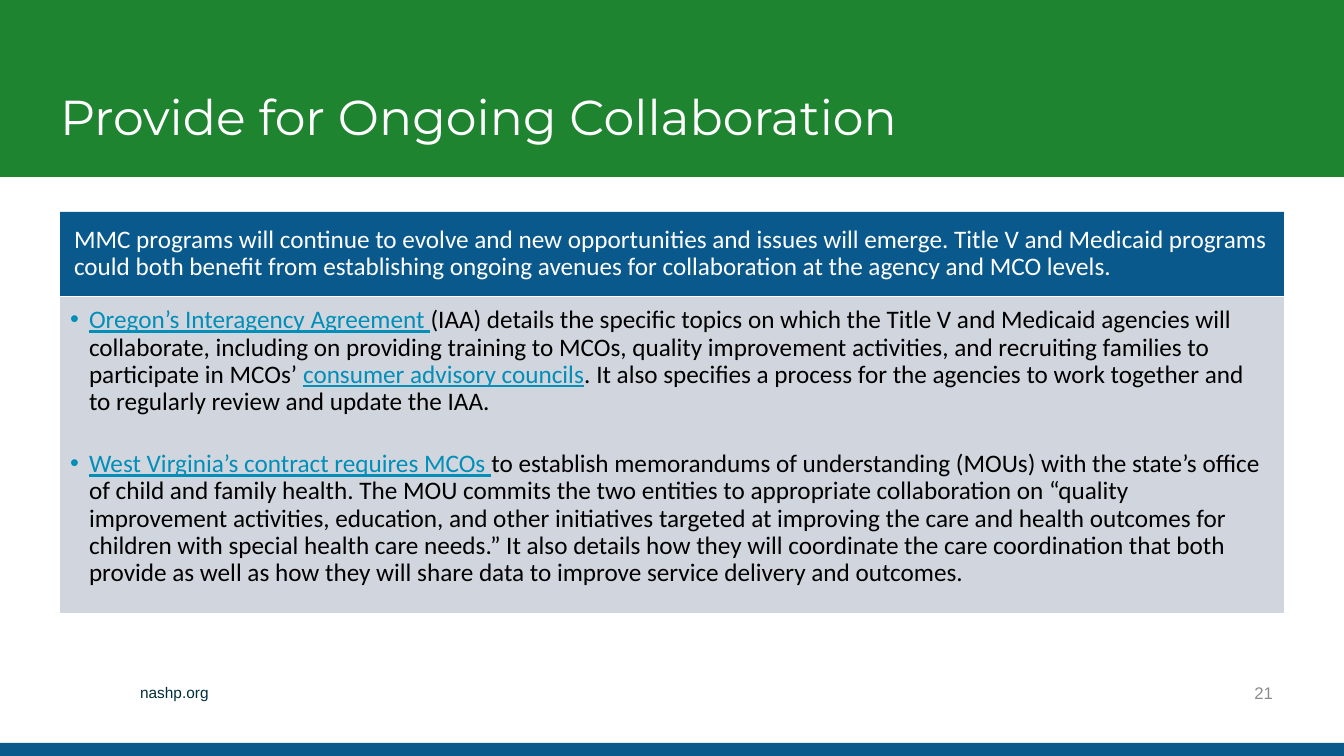
"""Build the slide on ongoing collaboration between Title V and Medicaid."""
from lxml.etree import SubElement
from pptx import Presentation
from pptx.dml.color import RGBColor
from pptx.enum.shapes import MSO_SHAPE as Shape
from pptx.enum.text import MSO_ANCHOR as Anchor, PP_ALIGN as Align
from pptx.oxml.ns import qn
from pptx.util import Emu, Pt

EMU_PER_PX = 914400 / 100.8
WIDTH, HEIGHT = 1344, 756
LEFT, PANEL_WIDTH = 60, 1224
WHITE, BLACK, GREEN, BLUE = "FFFFFF", "000000", "1F842F", "0A598C"
PANEL, TEAL, NAVY, GREY = "CCD1DA", "008FB9", "002E3B", "8C8C8C"

INTRO = (
    "MMC programs will continue to evolve and new opportunities and issues will emerge. "
    "Title V and Medicaid programs could both benefit from establishing ongoing avenues "
    "for collaboration at the agency and MCO levels."
)
EXAMPLES = [
    [
        ("Oregon’s Interagency Agreement ", True),
        ("(IAA) details the specific topics on which the Title V and Medicaid agencies will "
         "collaborate, including on providing training to MCOs, quality improvement activities, "
         "and recruiting families to participate in MCOs’ ", False),
        ("consumer advisory councils", True),
        (". It also specifies a process for the agencies to work together and to regularly "
         "review and update the IAA.", False),
    ],
    [
        ("West Virginia’s contract requires MCOs ", True),
        ("to establish memorandums of understanding (MOUs) with the state’s office of child and "
         "family health. The MOU commits the two entities to appropriate collaboration on "
         "“quality improvement activities, education, and other initiatives targeted at "
         "improving the care and health outcomes for children with special health care needs.” "
         "It also details how they will coordinate the care coordination that both provide as "
         "well as how they will share data to improve service delivery and outcomes.", False),
    ],
]


def px(length):
    """Turn pixels into EMU."""
    return Emu(round(length * EMU_PER_PX))


def color(value):
    """Turn a hex string into a colour."""
    return RGBColor.from_string(value)


def style(span, size, face, hue):
    """Set the size, typeface and colour of a run."""
    span.font.size = Pt(size)
    span.font.name = face
    span.font.color.rgb = color(hue)


def set_frame(frame, insets, anchor):
    """Set wrapping, insets and vertical anchor of a text frame."""
    frame.word_wrap = True
    frame.vertical_anchor = anchor
    (frame.margin_left, frame.margin_top,
     frame.margin_right, frame.margin_bottom) = map(px, insets)


def add_band(page, place, hue, opacity=100):
    """Add a plain filled rectangle."""
    band = page.shapes.add_shape(Shape.RECTANGLE, *map(px, place))
    band.shadow.inherit = False
    band.fill.solid()
    band.fill.fore_color.rgb = color(hue)
    band.line.fill.background()
    if opacity < 100:
        tint = band.fill._xPr.find(qn("a:solidFill"))[0]
        SubElement(tint, qn("a:alpha"), val=str(opacity * 1000))
    return band


def write_line(frame, text, size, face, hue, spacing=1.0, align=Align.LEFT):
    """Write one paragraph of uniform text."""
    para = frame.paragraphs[0]
    para.text = text
    para.line_spacing = spacing
    para.alignment = align
    style(para.runs[0], size, face, hue)


def add_label(page, place, insets, anchor, *wording):
    """Add a text box holding one line."""
    box = page.shapes.add_textbox(*map(px, place))
    set_frame(box.text_frame, insets, anchor)
    write_line(box.text_frame, *wording)


def add_bullet(para, spans):
    """Fill a bulleted paragraph with plain and link-styled runs."""
    props = para._p.get_or_add_pPr()
    props.set("marL", str(px(19)))
    props.set("indent", str(-px(19)))
    SubElement(props, qn("a:buFont"), typeface="Arial")
    SubElement(props, qn("a:buChar"), char="•")
    para.line_spacing = 0.9
    para.alignment = Align.LEFT
    for text, linked in spans:
        span = para.add_run()
        span.text = text
        style(span, 18, "Calibri", TEAL if linked else BLACK)
        span.font.underline = linked


def add_examples(page):
    """Add the pale panel with the state examples."""
    frame = add_band(page, (LEFT, 297, PANEL_WIDTH, 316), PANEL, 90).text_frame
    set_frame(frame, (10, 10, 14, 16), Anchor.TOP)
    for index, spans in enumerate(EXAMPLES):
        para = frame.add_paragraph() if index else frame.paragraphs[0]
        add_bullet(para, spans)
        if index:
            para.space_before = Pt(25)


def main():
    """Build and save the deck."""
    deck = Presentation()
    deck.slide_width, deck.slide_height = px(WIDTH), px(HEIGHT)
    page = deck.slides.add_slide(deck.slide_layouts[6])
    add_label(page, (130, 678, 632, 29), (10, 5, 10, 5), Anchor.TOP,
              "nashp.org", 11, "Arial", NAVY)
    add_band(page, (0, 0, WIDTH, 177), GREEN)
    add_band(page, (0, 743, WIDTH, 13), "0A5A8C")
    add_label(page, (LEFT, 22, PANEL_WIDTH, 129), (0, 5, 10, 5), Anchor.BOTTOM,
              "Provide for Ongoing Collaboration", 35, "Montserrat", WHITE, 0.9)
    intro = add_band(page, (LEFT, 212, PANEL_WIDTH, 84), BLUE).text_frame
    set_frame(intro, (14, 8, 14, 8), Anchor.MIDDLE)
    write_line(intro, INTRO, 18, "Calibri", WHITE, 0.9)
    add_examples(page)
    add_label(page, (975, 673, 308, 40), (10, 5, 10, 5), Anchor.MIDDLE,
              "21", 12, "Arial", GREY, 1.0, Align.RIGHT)
    deck.save("out.pptx")


if __name__ == "__main__":
    main()
